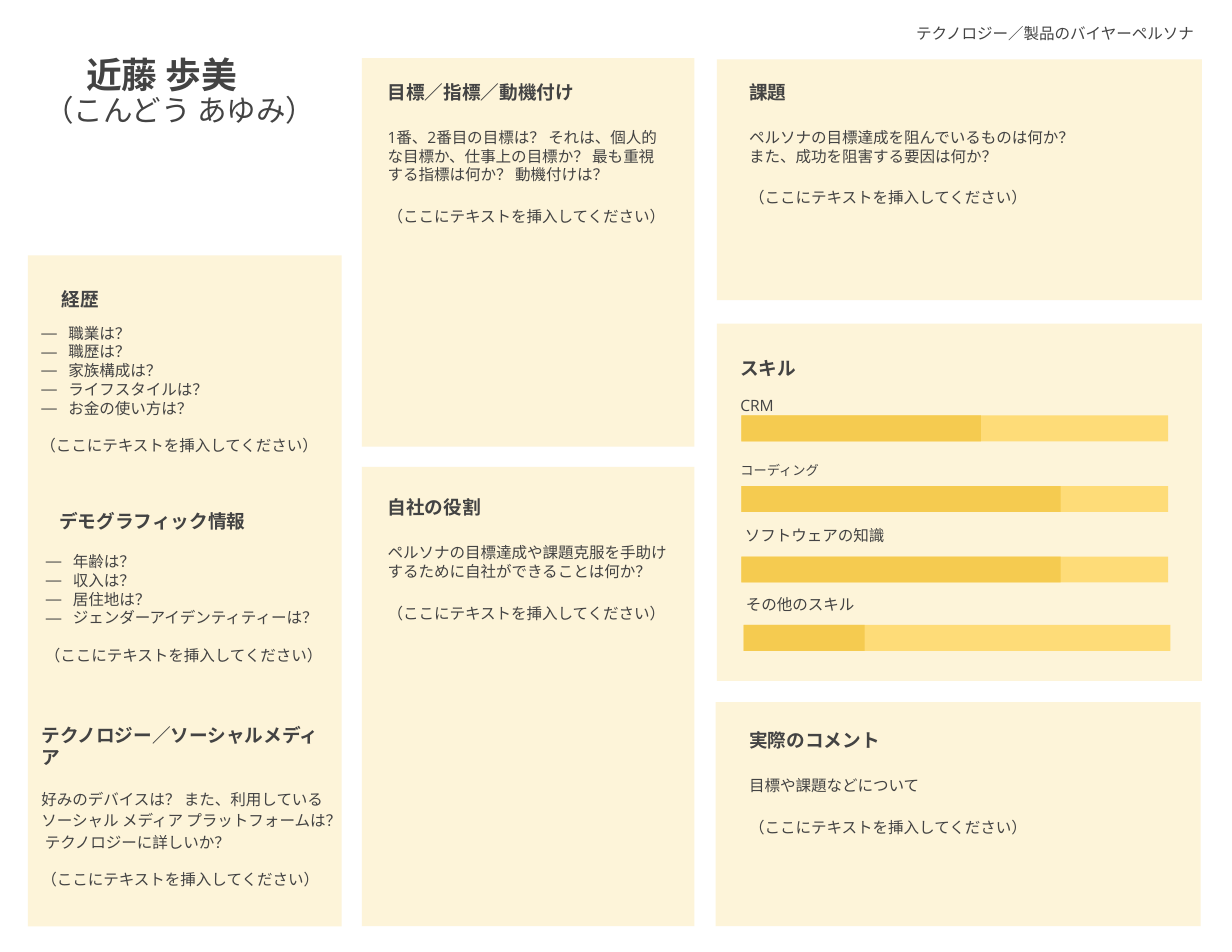
from lxml import etree
from pptx import Presentation
from pptx.dml.color import RGBColor
from pptx.enum.shapes import MSO_SHAPE
from pptx.enum.text import MSO_ANCHOR, MSO_AUTO_SIZE, PP_ALIGN
from pptx.oxml.ns import qn
from pptx.util import Pt

COLORS = {"text": "434343", "card": "FDF4D9", "track": "FEDC78", "level": "F5CB50"}
FONT = "Open Sans"
INSERT_HERE = "（ここにテキストを挿入してください）"

prs = Presentation()
prs.slide_width, prs.slide_height = Pt(792), Pt(612)
slide = prs.slides.add_slide(prs.slide_layouts[4])
shapes = slide.shapes


def add_block(box, color):
    block = shapes.add_shape(MSO_SHAPE.RECTANGLE, *map(Pt, box))
    block.fill.solid()
    block.fill.fore_color.rgb = RGBColor.from_string(COLORS[color])
    block.line.fill.background()
    block.shadow.inherit = False


def write(box, lines, inset=(8.64, 8.64), holder=None, align=PP_ALIGN.LEFT):
    """Each line: text, size, bold, line spacing, space before, bulleted."""
    holder = holder or shapes.add_textbox(*map(Pt, box))
    holder.left, holder.top, holder.width, holder.height = map(Pt, box)
    frame = holder.text_frame
    frame.word_wrap = True
    frame.auto_size = MSO_AUTO_SIZE.NONE
    frame.vertical_anchor = MSO_ANCHOR.TOP
    frame.margin_left = frame.margin_right = Pt(inset[0])
    frame.margin_top = frame.margin_bottom = Pt(inset[1])
    for i, (text, size, bold, spacing, before, bulleted) in enumerate(lines):
        paragraph = frame.paragraphs[0] if i == 0 else frame.add_paragraph()
        paragraph.text = text
        paragraph.alignment = align
        paragraph.line_spacing = spacing
        paragraph.space_before, paragraph.space_after = Pt(before), Pt(0)
        props = paragraph._p.get_or_add_pPr()
        props.set("marL", str(Pt(18 if bulleted else 0)))
        props.set("indent", str(Pt(-17.3 if bulleted else 0)))
        if bulleted:
            etree.SubElement(props, qn("a:buChar")).set("char", "—")
        else:
            etree.SubElement(props, qn("a:buNone"))
        font = paragraph.font
        font.name, font.size, font.bold = FONT, Pt(size), bold
        font.color.rgb = RGBColor.from_string(COLORS["text"])


# Persona name and page label
write((13, 29.5, 205.2, 60.5),
      [("近藤 歩美　", 23, True, 0.9, 0, False),
       ("（こんどう あゆみ）", 19, False, 0.9, 0, False)],
      inset=(7.2, 7.2), holder=shapes.title, align=PP_ALIGN.CENTER)
write((580.3, 5, 198, 24.5),
      [("テクノロジー／製品のバイヤーペルソナ", 10, False, 1.15, 0, False)],
      holder=slide.placeholders[1])

# Card backgrounds
for card in [
    (18, 164.2, 201.6, 431.3),
    (232.6, 37.4, 213.8, 249.8),
    (232.6, 300.2, 213.8, 295.2),
    (460.1, 451.4, 311.8, 144),
    (460.8, 208.1, 311.8, 229.7),
    (460.8, 38.2, 311.8, 154.8),
]:
    add_block(card, "card")

# Section headings that stand apart from their content
for heading, box in [
    ("スキル", (467.3, 218.9, 190.8, 37.4)),
    ("経歴", (31, 174.2, 162.7, 37.4)),
    ("デモグラフィック情報", (29.5, 316.8, 179.3, 34.6)),
]:
    write(box, [(heading, 12, True, 1.15, 0, False)])

# Background and demographics lists, raised above their card
for index, box, questions in [
    (2, (18.7, 204.5, 195.1, 92.2),
     ["職業は？", "職歴は？", "家族構成は？", "ライフスタイルは？", "お金の使い方は？"]),
    (4, (21.6, 351.4, 195.1, 79.9),
     ["年齢は？", "収入は？", "居住地は？", "ジェンダーアイデンティティーは？"]),
]:
    question_list = slide.placeholders[index]
    question_list.element.getparent().append(question_list.element)
    write(box,
          [(question, 10, False, 1, 0, True) for question in questions]
          + [(INSERT_HERE, 10, False, 1, 12, False)],
          inset=(7.2, 3.6), holder=question_list)

# Technology and social media
write((18, 456.5, 201.6, 100.8), [
    ("テクノロジー／ソーシャルメディア", 12, True, 1, 0, False),
    ("好みのデバイスは？ また、利用しているソーシャル メディア プラットフォームは？ "
     "テクノロジーに詳しいか？", 10, False, 1.15, 12, False),
    (INSERT_HERE, 10, False, 1, 12, False),
])

# Goals, role, challenges and comments
for left, top, width, heading, prompt in [
    (240.5, 43.2, 198, "目標／指標／動機付け",
     "1番、2番目の目標は？ それは、個人的な目標か、仕事上の目標か？ "
     "最も重視する指標は何か？ 動機付けは？"),
    (240.5, 310.3, 198, "自社の役割",
     "ペルソナの目標達成や課題克服を手助けするために自社ができることは何か？"),
    (473, 43.2, 263.5, "課題",
     "ペルソナの目標達成を阻んでいるものは何か？ \vまた、成功を阻害する要因は何か？"),
    (473, 460.1, 263.5, "実際のコメント", "目標や課題などについて"),
]:
    write((left, top, width, 126.7), [
        (heading, 12, True, 1, 0, False),
        (prompt, 10, False, 1, 16, False),
        (INSERT_HERE, 10, False, 1.15, 13, False),
    ])

# Skill labels and level bars
for skill, size, spacing, label_left, label_top, label_width, left, top, level in [
    ("CRM", 10, 1.15, 467.3, 244.1, 71.3, 476.6, 267.1, 154.1),
    ("コーディング", 8.5, 1.15, 467.3, 287.3, 71.3, 476.6, 312.5, 205.2),
    ("ソフトウェアの知識", 10, 0.95, 470.2, 330.5, 146.9, 476.6, 357.8, 205.2),
    ("その他のスキル", 10, 0.95, 470.9, 374.4, 146.9, 478.1, 401.8, 77.8),
]:
    write((label_left, label_top, label_width, 30),
          [(skill, size, False, spacing, 0, False)])
    add_block((left, top, 274.3, 16.6), "track")
    add_block((left, top, level, 16.6), "level")

# Unused template placeholder
spare = slide.placeholders[3].element
spare.getparent().remove(spare)

prs.save("out.pptx")
